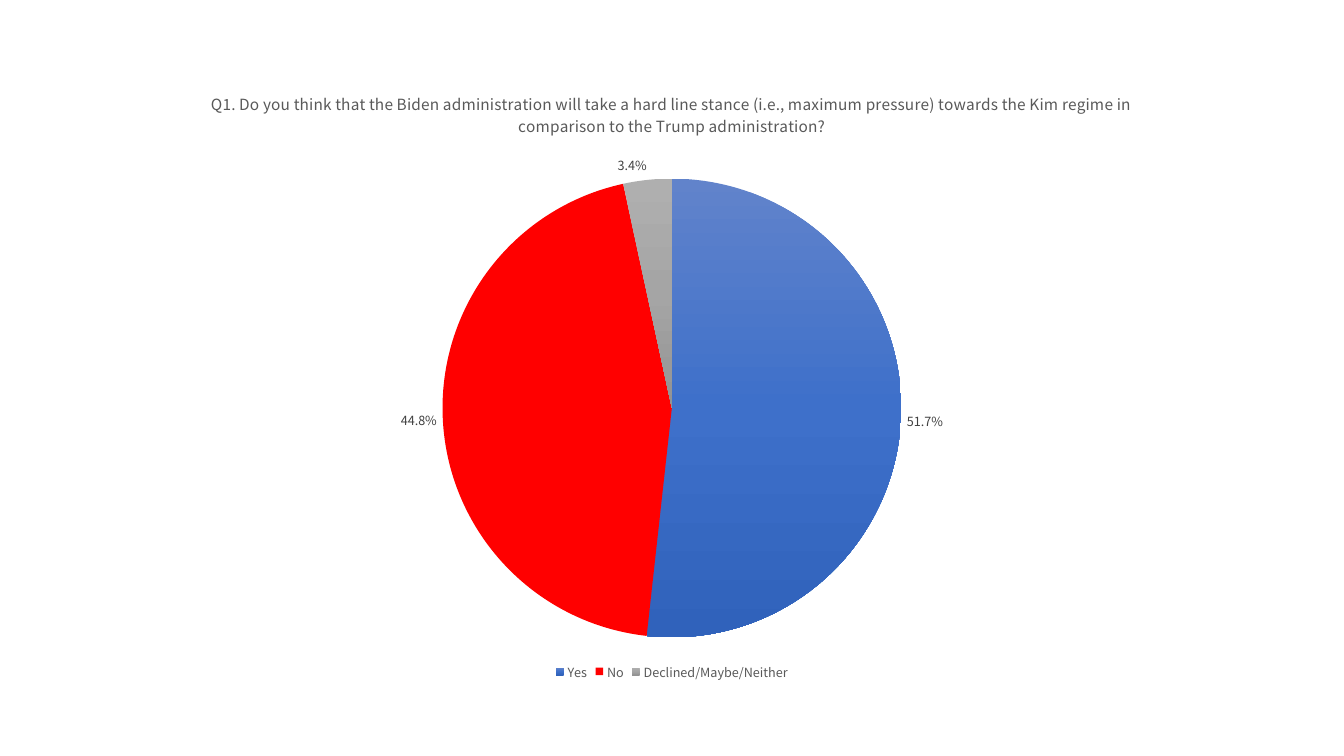
import copy
from dataclasses import dataclass

import pptx
import pptx.chart.data
import pptx.chart.series
import pptx.dml.color
import pptx.enum.chart
import pptx.text.text
import pptx.util

Pt = pptx.util.Pt
RGBColor = pptx.dml.color.RGBColor

FONT_NAME = "Noto Sans CJK KR"
BLACK = RGBColor(0x00, 0x00, 0x00)
DARK_GREY = RGBColor(0x40, 0x40, 0x40)
GREY = RGBColor(0x59, 0x59, 0x59)
RED = RGBColor(0xFF, 0x00, 0x00)
BLUES = (
    RGBColor(0x61, 0x83, 0xCB),
    RGBColor(0x3E, 0x70, 0xCA),
    RGBColor(0x30, 0x62, 0xBB),
)
SILVERS = (
    RGBColor(0xAF, 0xAF, 0xAF),
    RGBColor(0xA5, 0xA5, 0xA5),
    RGBColor(0x93, 0x93, 0x93),
)
QUESTION = (
    "Q1. Do you think that the Biden administration will take a hard line stance "
    "(i.e., maximum pressure) towards the Kim regime in comparison to the Trump "
    "administration?"
)


@dataclass(frozen=True)
class Answer:
    label: str
    share: float
    colors: tuple[RGBColor, ...]


ANSWERS = (
    Answer("Yes", 0.517, BLUES),
    Answer("No", 0.448, (RED,)),
    Answer("Declined/Maybe/Neither", 0.034, SILVERS),
)


def style_font(font: pptx.text.text.Font, size: float, color: RGBColor) -> None:
    font.name = FONT_NAME
    font.size = Pt(size)
    font.bold = False
    font.color.rgb = color


def paint_slice(
    responses: pptx.chart.series.PieSeries, index: int, answer: Answer
) -> None:
    slice_format = responses.points[index].format
    slice_format.line.fill.background()
    fill = slice_format.fill
    if len(answer.colors) == 1:
        fill.solid()
        fill.fore_color.rgb = answer.colors[0]
        return
    fill.gradient()
    fill.gradient_angle = 270
    stop_list = responses._element.xpath(".//a:gsLst")[-1]
    stop_list.append(copy.deepcopy(stop_list[0]))
    for order, (stop, color) in enumerate(zip(fill.gradient_stops, answer.colors)):
        stop.position = order / (len(answer.colors) - 1)
        stop.color.rgb = color


def add_answer_pie(slide: pptx.slide.Slide) -> None:
    survey = pptx.chart.data.CategoryChartData(number_format="0.0%")
    survey.categories = [answer.label for answer in ANSWERS]
    survey.add_series(QUESTION, [answer.share for answer in ANSWERS])
    pie = slide.shapes.add_chart(
        pptx.enum.chart.XL_CHART_TYPE.PIE,
        Pt(50.4), Pt(50.4), Pt(859), Pt(438.5), survey,
    ).chart
    style_font(pie.font, 10, BLACK)

    pie.has_title = True
    question = pie.chart_title.text_frame
    question.text = QUESTION
    style_font(question.paragraphs[0].font, 11, GREY)

    pie.has_legend = True
    pie.legend.position = pptx.enum.chart.XL_LEGEND_POSITION.BOTTOM
    pie.legend.include_in_layout = False
    style_font(pie.legend.font, 9, GREY)

    plot = pie.plots[0]
    plot.vary_by_categories = True
    plot.has_data_labels = True
    shares = plot.data_labels
    shares.show_value = True
    shares.show_percentage = False
    shares.number_format = "0.0%"
    shares.number_format_is_linked = False
    shares.position = pptx.enum.chart.XL_LABEL_POSITION.OUTSIDE_END
    style_font(shares.font, 9, DARK_GREY)

    for index, answer in enumerate(ANSWERS):
        paint_slice(plot.series[0], index, answer)


def main() -> None:
    presentation = pptx.Presentation()
    presentation.slide_width = Pt(960)
    presentation.slide_height = Pt(540)
    add_answer_pie(presentation.slides.add_slide(presentation.slide_layouts[6]))
    presentation.save("out.pptx")


if __name__ == "__main__":
    main()
